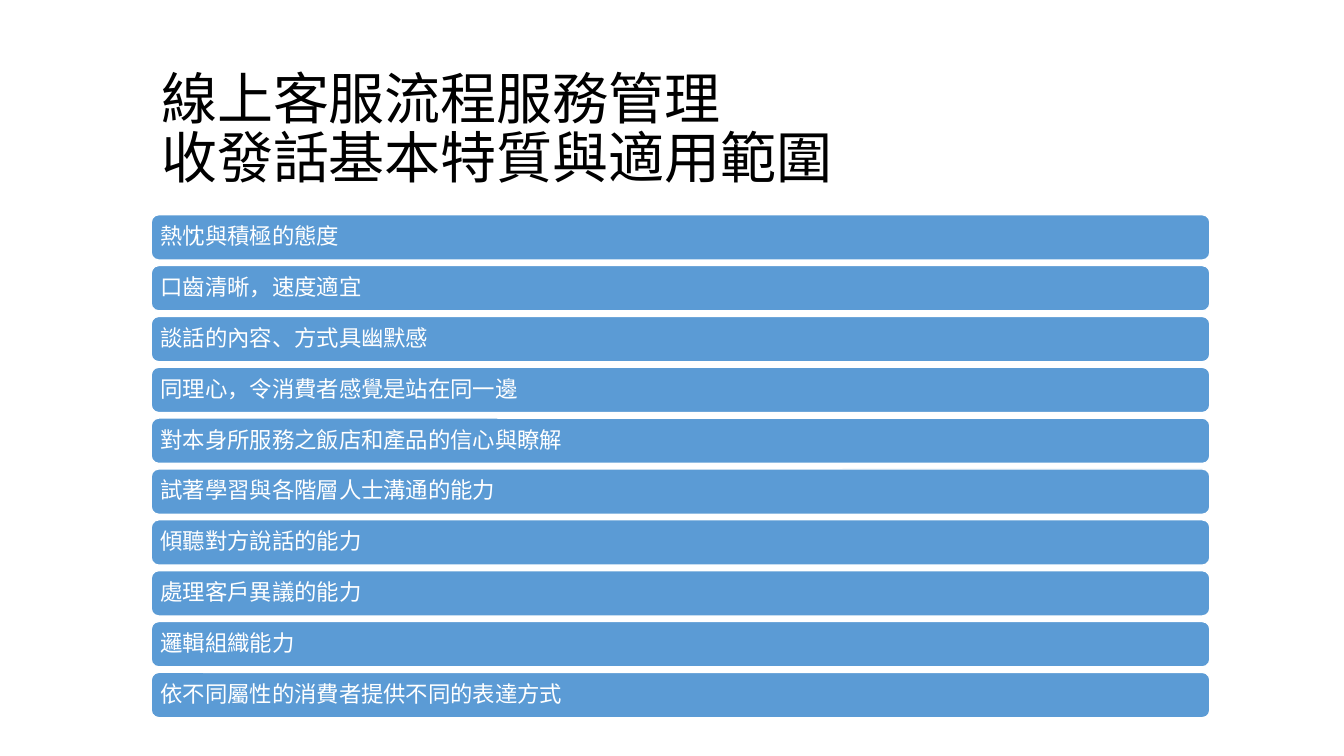
from pptx import Presentation
from pptx.dml.color import RGBColor
from pptx.enum.shapes import MSO_SHAPE
from pptx.enum.text import MSO_ANCHOR, PP_ALIGN
from pptx.oxml.ns import qn
from pptx.util import Inches, Pt
from lxml import etree

ROUNDED = MSO_SHAPE.ROUNDED_RECTANGLE
MIDDLE = MSO_ANCHOR.MIDDLE
LEFT = PP_ALIGN.LEFT

BLACK = RGBColor(0x00, 0x00, 0x00)
WHITE = RGBColor(0xFF, 0xFF, 0xFF)
BLUE = RGBColor(0x5B, 0x9B, 0xD5)

COLUMN = 1.5
FIRST_COLUMN, COLUMN_SPAN = 1, 7
LIST_TOP, LIST_BOTTOM = 2.13, 7.12
BAR_HEIGHT = 0.45

TITLE_LINES = ["線上客服流程服務管理", "收發話基本特質與適用範圍"]
QUALITIES = [
    "熱忱與積極的態度",
    "口齒清晰，速度適宜",
    "談話的內容、方式具幽默感",
    "同理心，令消費者感覺是站在同一邊",
    "對本身所服務之飯店和產品的信心與瞭解",
    "試著學習與各階層人士溝通的能力",
    "傾聽對方說話的能力",
    "處理客戶異議的能力",
    "邏輯組織能力",
    "依不同屬性的消費者提供不同的表達方式",
]


class ServiceSlide:
    title_font = "Noto Sans CJK SC"
    body_font = "Calibri"

    def __init__(self, presentation):
        self.slide = presentation.slides.add_slide(presentation.slide_layouts[6])

    def area(self, top, height):
        lengths = (FIRST_COLUMN * COLUMN, top, COLUMN_SPAN * COLUMN, height)
        return [Inches(length) for length in lengths]

    def add_text(self, shape, lines, font, size, color, spacing):
        frame = shape.text_frame
        frame.word_wrap = True
        frame.vertical_anchor = MIDDLE
        paragraph = frame.paragraphs[0]
        paragraph.alignment = LEFT
        paragraph.line_spacing = spacing
        for index, line in enumerate(lines):
            if index:
                paragraph.add_line_break()
            run = paragraph.add_run()
            run.text = line
            run.font.name = font
            run.font.size = Pt(size)
            run.font.color.rgb = color
            properties = run._r.get_or_add_rPr()
            east_asian = etree.Element(qn("a:ea"), typeface=self.title_font)
            properties.find(qn("a:latin")).addnext(east_asian)

    def title(self, lines, top, height):
        box = self.slide.shapes.add_textbox(*self.area(top, height))
        self.add_text(box, lines, self.title_font, 40, BLACK, 0.89)

    def bar(self, text, top):
        shape = self.slide.shapes.add_shape(ROUNDED, *self.area(top, BAR_HEIGHT))
        shape.shadow.inherit = False
        shape.fill.solid()
        shape.fill.fore_color.rgb = BLUE
        shape.line.color.rgb = WHITE
        shape.line.width = Pt(1)
        frame = shape.text_frame
        frame.margin_left = frame.margin_right = Inches(0.07)
        frame.margin_top = frame.margin_bottom = Inches(0.07)
        self.add_text(shape, [text], self.body_font, 16, WHITE, 0.9)

    def bars(self, texts):
        pitch = (LIST_BOTTOM - LIST_TOP - BAR_HEIGHT) / (len(texts) - 1)
        for row, text in enumerate(texts):
            self.bar(text, LIST_TOP + row * pitch)


def main():
    presentation = Presentation()
    presentation.slide_width = Inches(13.33)
    presentation.slide_height = Inches(7.5)
    service = ServiceSlide(presentation)
    service.title(TITLE_LINES, 0.7, 1.2)
    service.bars(QUALITIES)
    presentation.save("out.pptx")


if __name__ == "__main__":
    main()
